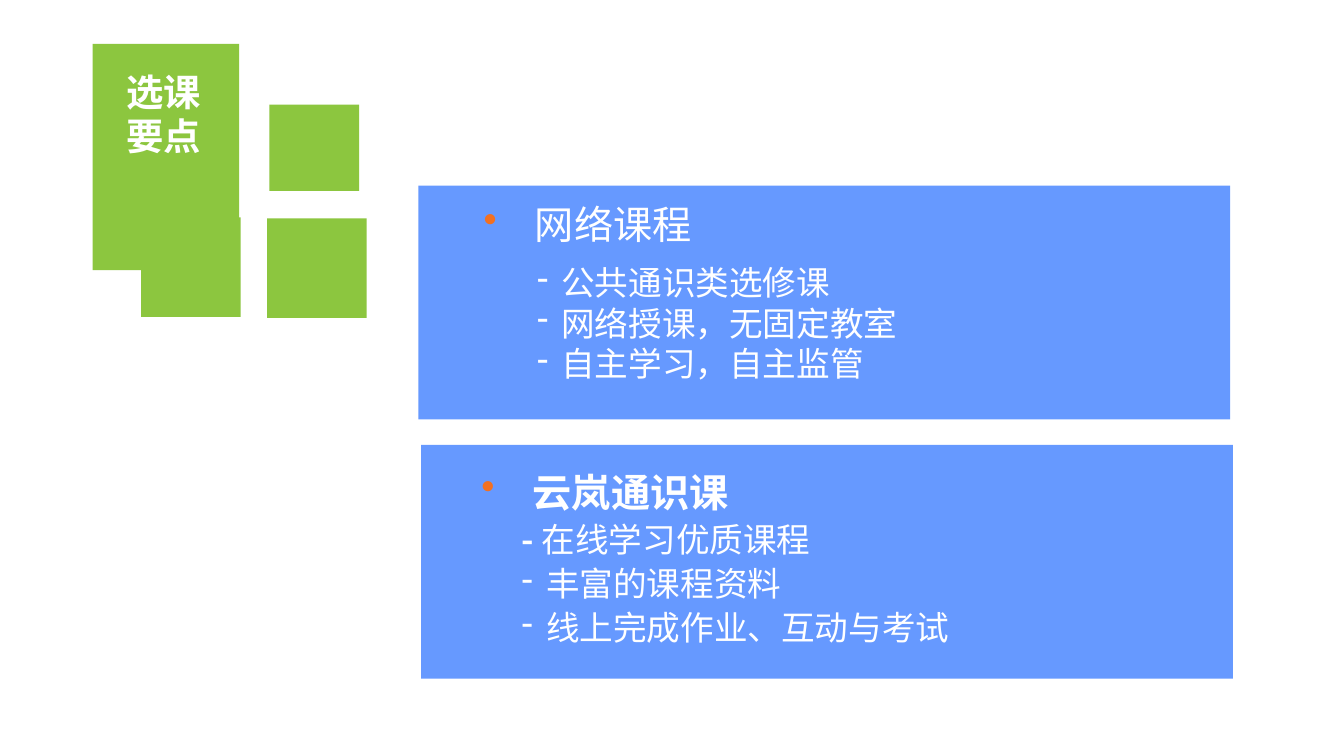
from dataclasses import dataclass

from lxml import etree
from pptx import Presentation
from pptx.dml.color import RGBColor
from pptx.enum.shapes import MSO_SHAPE
from pptx.enum.text import MSO_ANCHOR, PP_ALIGN
from pptx.oxml.ns import qn
from pptx.util import Cm, Pt

RECT = MSO_SHAPE.RECTANGLE
TOP = MSO_ANCHOR.TOP
LEFT = PP_ALIGN.LEFT


@dataclass(frozen=True)
class Theme:
    """Colours, font and type sizes of the slide."""
    green: str = "8CC63F"
    blue: str = "6699FF"
    orange: str = "F27021"
    white: str = "FFFFFF"
    font: str = "Noto Sans CJK SC"
    title: int = 20
    heading: int = 21
    item: int = 18
    leading: float = 1.2


THEME = Theme()


def add_block(s, box, fill, inset=0.0):
    """Add a plain rectangle, box given in cm, with text starting at inset."""
    sp = s.shapes.add_shape(RECT, *(Cm(v) for v in box))
    sp.shadow.inherit = False
    sp.fill.solid()
    sp.fill.fore_color.rgb = RGBColor.from_string(fill)
    sp.line.fill.background()
    tf = sp.text_frame
    tf.word_wrap = True
    tf.vertical_anchor = TOP
    tf.margin_left = tf.margin_right = tf.margin_bottom = 0
    tf.margin_top = Cm(inset)
    return sp


def add_run(p, text, size, bold=False):
    """Add a white run in the theme font."""
    r = p.add_run()
    r.text = text
    r.font.name = THEME.font
    r.font.size = Pt(size)
    r.font.bold = bold
    r.font.color.rgb = RGBColor.from_string(THEME.white)
    etree.SubElement(r.font._element, qn("a:ea"), typeface=THEME.font)


def add_text(tf, text, size, bold=False, before=0, margin=0.0, hang=0.0,
             bullet=None, bullet_color=None, lead=None):
    """Add a paragraph, with an optional bullet or a bold lead-in run."""
    p = tf.paragraphs[0]
    if p.runs:
        p = tf.add_paragraph()
    p.alignment = LEFT
    p.line_spacing = Pt(size * THEME.leading)
    p.space_before = Pt(before)
    pPr = p._p.get_or_add_pPr()
    pPr.set("marL", str(Cm(margin)))
    pPr.set("indent", str(Cm(-hang)))
    if bullet_color:
        clr = etree.SubElement(pPr, qn("a:buClr"))
        etree.SubElement(clr, qn("a:srgbClr"), val=bullet_color)
    if bullet:
        etree.SubElement(pPr, qn("a:buChar"), char=bullet)
    if lead:
        add_run(p, lead, size, bold=True)
    add_run(p, text, size, bold)


def add_title(s, box):
    """Place the title tile and the three squares beside it."""
    x, y, w, h = box
    side = 1.88
    squares = [(x + 3.34, y + 1.15, 1.7, 1.63),
               (x + 0.92, y + 3.28, side, side),
               (x + 3.3, y + 3.3, side, side)]
    for square in squares:
        add_block(s, square, THEME.green)
    tf = add_block(s, box, THEME.green, inset=0.47).text_frame
    add_text(tf, "选课 要点", THEME.title, bold=True, margin=0.64)


def add_panel(s, box, heading, items, inset, margin, item_margin,
              bold=False, first_gap=0, gap=0, lead=None):
    """Place a blue panel with a dotted heading and dashed items."""
    tf = add_block(s, box, THEME.blue, inset).text_frame
    add_text(tf, heading, THEME.heading, bold=bold, margin=margin, hang=0.97,
             bullet="•", bullet_color=THEME.orange)
    for i, item in enumerate(items):
        before = gap if i else first_gap
        if lead and i == 0:
            add_text(tf, item, THEME.item, before=before,
                     margin=item_margin - 0.46, lead=lead)
        else:
            add_text(tf, item, THEME.item, before=before,
                     margin=item_margin, hang=0.46, bullet="-")


def main():
    """Build the slide and save it."""
    prs = Presentation()
    prs.slide_width, prs.slide_height = Cm(25.4), Cm(14.29)
    s = prs.slides.add_slide(prs.slide_layouts[6])
    add_title(s, (1.75, 0.83, 2.77, 4.28))
    add_panel(s, (7.96, 8.41, 15.34, 4.42), "云岚通识课",
              ["在线学习优质课程", "丰富的课程资料", "线上完成作业、互动与考试"],
              inset=0.44, margin=2.11, item_margin=2.36,
              bold=True, first_gap=2, gap=2, lead="- ")
    add_panel(s, (7.91, 3.51, 15.34, 4.42), "网络课程",
              ["公共通识类选修课", "网络授课，无固定教室", "自主学习，自主监管"],
              inset=0.28, margin=2.2, item_margin=2.7, first_gap=8)
    prs.save("out.pptx")


if __name__ == "__main__":
    main()
